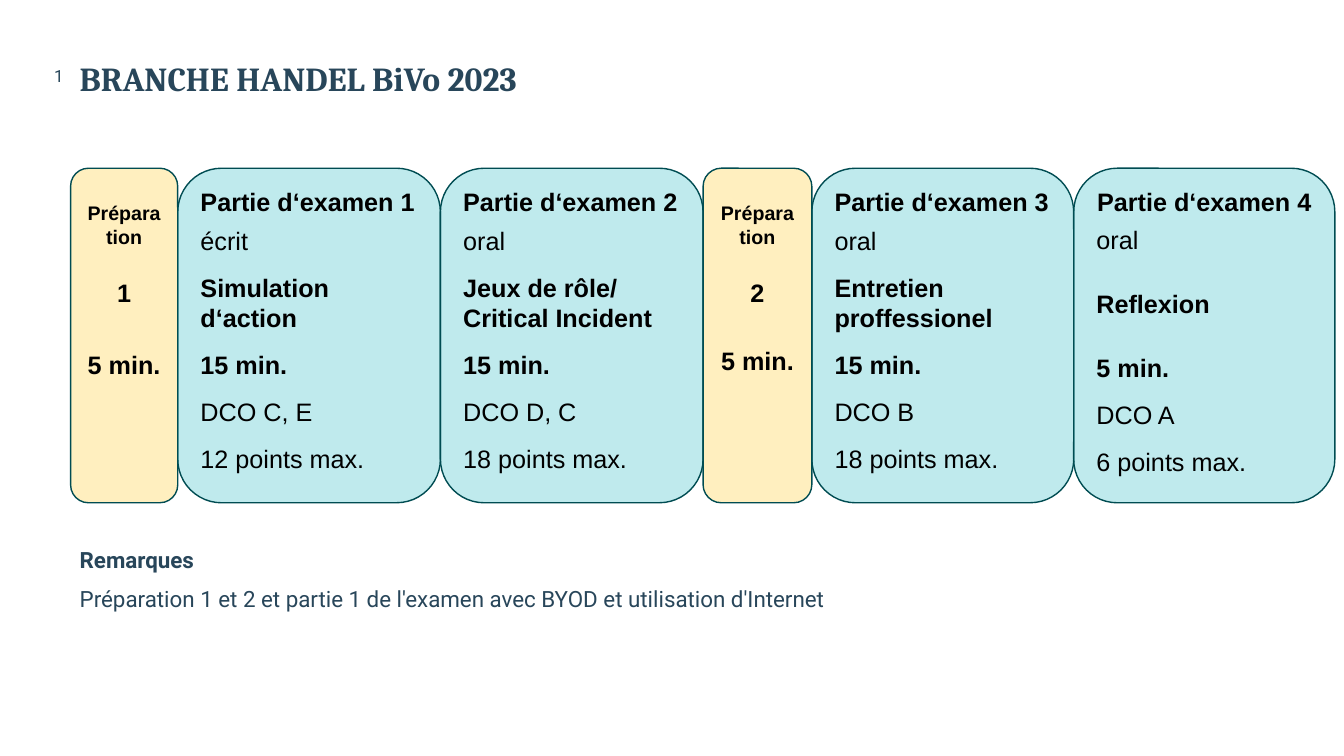
import lxml.etree
import pptx
import pptx.dml.color
import pptx.enum.shapes
import pptx.enum.text
import pptx.oxml.ns
import pptx.util

ALIGN = pptx.enum.text.PP_ALIGN
ANCHOR = pptx.enum.text.MSO_ANCHOR


def color(hex_code):
    return pptx.dml.color.RGBColor.from_string(hex_code)


def cm(*lengths):
    return [pptx.util.Cm(length) for length in lengths]


def line(text, **style):
    """Describe one paragraph: size, font, color, bold, align, before, after, spacing."""
    return {"text": text, **style}


class ExamSlide:
    INK, BORDER = "28465A", "004C52"
    TEAL, AMBER = "00ADBA", "FFC000"
    HEADING, BODY, BOX_FONT = "Cambria", "Roboto", "Arial"
    BOX_TOP, BOX_HEIGHT = 4.24, 8.43

    def __init__(self, deck):
        self.slide = deck.slides.add_slide(deck.slide_layouts[6])

    def set_lines(self, frame, lines, **defaults):
        frame.word_wrap = True
        for index, item in enumerate(lines):
            style = {**defaults, **item}
            paragraph = frame.paragraphs[0] if index == 0 else frame.add_paragraph()
            paragraph.alignment = style.get("align", ALIGN.LEFT)
            paragraph.space_before = pptx.util.Pt(style.get("before", 0) if index else 0)
            paragraph.space_after = pptx.util.Pt(style.get("after", 0))
            if "spacing" in style:
                paragraph.line_spacing = pptx.util.Pt(style["spacing"])
            run = paragraph.add_run()
            run.text = style["text"]
            run.font.name = style["font"]
            run.font.size = pptx.util.Pt(style["size"])
            run.font.bold = style.get("bold", False)
            run.font.color.rgb = color(style["color"])

    def text(self, left, top, width, height, lines, anchor=ANCHOR.TOP, **defaults):
        frame = self.slide.shapes.add_textbox(*cm(left, top, width, height)).text_frame
        frame.margin_left = frame.margin_right = frame.margin_top = frame.margin_bottom = 0
        frame.vertical_anchor = anchor
        self.set_lines(frame, lines, color=self.INK, **defaults)

    def box(self, left, width, fill, lines, top_margin=0.13):
        shape = self.slide.shapes.add_shape(
            pptx.enum.shapes.MSO_SHAPE.ROUNDED_RECTANGLE,
            *cm(left, self.BOX_TOP, width, self.BOX_HEIGHT))
        shape.shadow.inherit = False
        shape.fill.solid()
        shape.fill.fore_color.rgb = color(fill)
        tint = shape.element.spPr.find(".//" + pptx.oxml.ns.qn("a:srgbClr"))
        lxml.etree.SubElement(tint, pptx.oxml.ns.qn("a:alpha"), val="25000")
        shape.line.color.rgb = color(self.BORDER)
        shape.line.width = pptx.util.Pt(1)
        shape.text_frame.vertical_anchor = ANCHOR.TOP
        shape.text_frame.margin_top = pptx.util.Cm(top_margin)
        self.set_lines(shape.text_frame, lines, font=self.BOX_FONT, size=18, color="000000")

    def preparation(self, left, width, number, gap):
        centred = {"align": ALIGN.CENTER, "bold": True}
        self.box(left, width, self.AMBER, [
            line("Préparation", size=14, **centred),
            line(number, before=20.7, **centred),
            line("5 min.", before=gap, after=6, **centred),
        ], top_margin=0.7)

    def exam_part(self, left, width, number, mode, topic, minutes, dco, points,
                  align=ALIGN.LEFT, topic_gaps=(6, 6), minutes_gap=6):
        around = {"before": 6, "after": 6}
        self.box(left, width, self.TEAL, [
            line(f"Partie d‘examen {number}", bold=True, align=align),
            line(mode, **around),
            line(topic, bold=True, before=topic_gaps[0], after=topic_gaps[1]),
            line(f"{minutes} min.", bold=True, before=minutes_gap, after=6),
            line(f"DCO {dco}", **around),
            line(f"{points} points max.", **around),
        ])


def main():
    deck = pptx.Presentation()
    deck.slide_width, deck.slide_height = cm(33.87, 19.05)
    exam = ExamSlide(deck)

    exam.text(2.01, 1.35, 31.86, 1.6, [line("BRANCHE HANDEL BiVo 2023")],
              font=exam.HEADING, size=24, bold=True, spacing=32)
    exam.text(0, 1.63, 1.6, 0.53, [line("1")], anchor=ANCHOR.BOTTOM,
              font=exam.BODY, size=12, align=ALIGN.RIGHT, spacing=18)
    exam.text(2.01, 13.67, 30.86, 2.64, [
        line("Remarques", bold=True),
        line("Préparation 1 et 2 et partie 1 de l'examen avec BYOD et utilisation d'Internet"),
    ], font=exam.BODY, size=16, spacing=22, before=6)

    stages = [
        (exam.preparation, 2.7, ("1", 30), {}),
        (exam.exam_part, 6.62, (1, "écrit", "Simulation d‘action", 15, "C, E", 12), {}),
        (exam.exam_part, 6.62,
         (2, "oral", "Jeux de rôle/ Critical Incident", 15, "D, C", 18), {}),
        (exam.preparation, 2.74, ("2", 27), {}),
        (exam.exam_part, 6.6, (3, "oral", "Entretien proffessionel", 15, "B", 18), {}),
        (exam.exam_part, 6.58, (4, "oral", "Reflexion", 5, "A", 6),
         {"align": ALIGN.CENTER, "topic_gaps": (18, 12), "minutes_gap": 12}),
    ]
    left = 1.78
    for draw, width, content, options in stages:
        draw(left, width, *content, **options)
        left += width

    deck.save("out.pptx")


if __name__ == "__main__":
    main()
